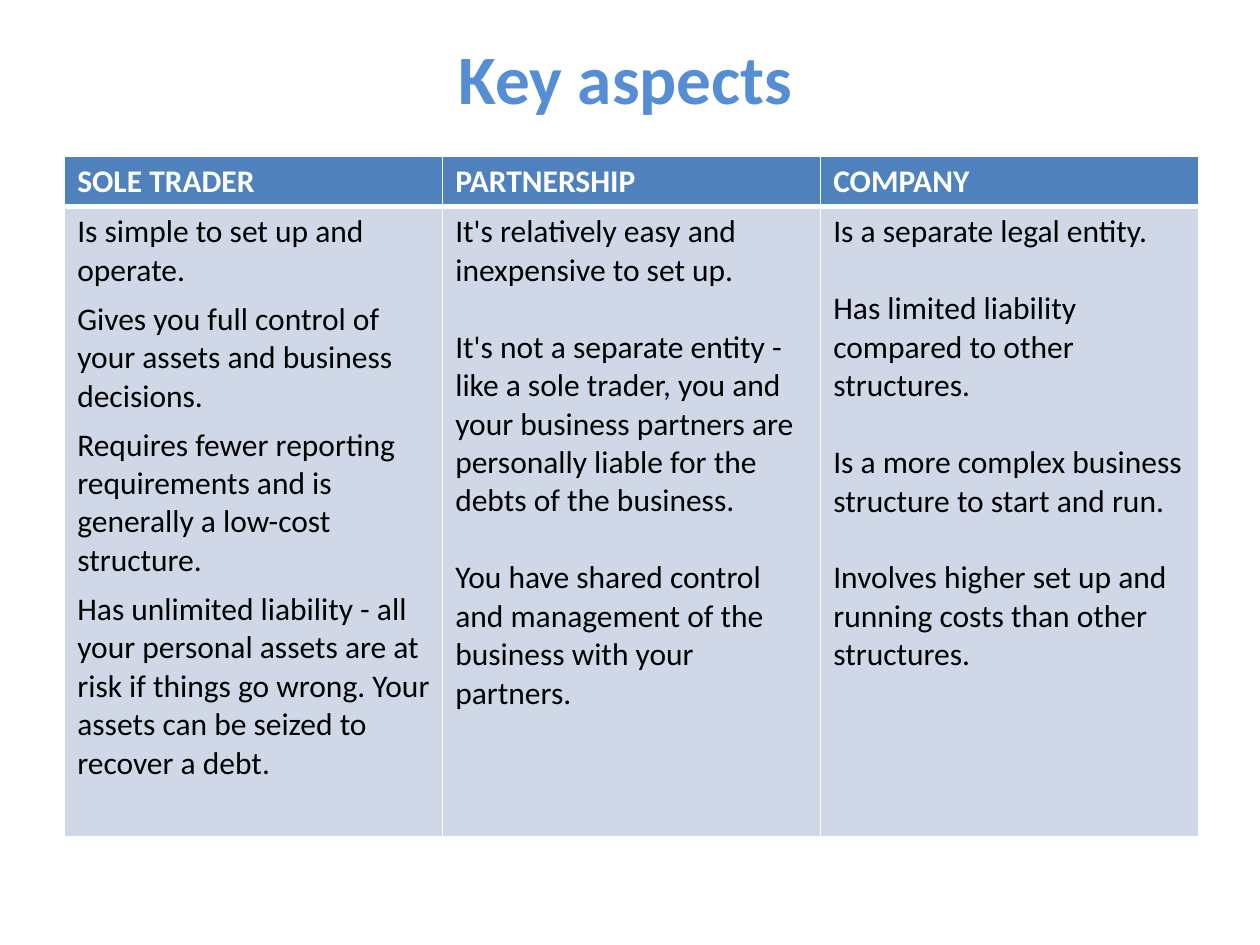
from dataclasses import dataclass

from lxml.etree import SubElement
from pptx import Presentation
from pptx.dml.color import RGBColor
from pptx.enum.text import MSO_ANCHOR, PP_ALIGN
from pptx.oxml.ns import qn
from pptx.slide import Slide
from pptx.table import _Cell
from pptx.util import Pt

FONT = "Calibri"
WHITE = "FFFFFF"
BLACK = "000000"
TITLE_BLUE = "558ED5"
HEADER_BLUE = "4F81BD"
BODY_BLUE = "D0D8E8"
TEXT_SIZE = 18
COLUMN_WIDTH = 216
HEADER_HEIGHT = 29
BODY_HEIGHT = 360


@dataclass
class Structure:
    name: str
    aspects: list[str]
    gap: float


@dataclass
class CellStyle:
    fill: str
    color: str
    bold: bool
    top_border: float
    bottom_border: float


HEADER_STYLE = CellStyle(HEADER_BLUE, WHITE, True, 1, 3)
BODY_STYLE = CellStyle(BODY_BLUE, BLACK, False, 3, 1)

STRUCTURES = [
    Structure("SOLE TRADER", [
        "Is simple to set up and operate.",
        "Gives you full control of your assets and business decisions.",
        "Requires fewer reporting requirements and is generally a low-cost structure.",
        "Has unlimited liability - all your personal assets are at risk if things go wrong. "
        "Your assets can be seized to recover a debt.",
    ], 6),
    Structure("PARTNERSHIP", [
        "It's relatively easy and inexpensive to set up.",
        "It's not a separate entity - like a sole trader, you and your business partners "
        "are personally liable for the debts of the business.",
        "You have shared control and management of the business with your partners.",
    ], 22),
    Structure("COMPANY", [
        "Is a separate legal entity.",
        "Has limited liability compared to other structures.",
        "Is a more complex business structure to start and run.",
        "Involves higher set up and running costs than other structures.",
    ], 22),
]


def rgb(value: str) -> RGBColor:
    return RGBColor.from_string(value)


def format_font(paragraph, size: float, color: str, bold: bool) -> None:
    for run in paragraph.runs:
        run.font.name = FONT
        run.font.size = Pt(size)
        run.font.bold = bold
        run.font.color.rgb = rgb(color)


def add_title(slide: Slide, text: str) -> None:
    shape = slide.shapes.add_textbox(Pt(31), Pt(16), Pt(653), Pt(56))
    text_frame = shape.text_frame
    text_frame.word_wrap = True
    text_frame.vertical_anchor = MSO_ANCHOR.MIDDLE
    text_frame.text = text
    paragraph = text_frame.paragraphs[0]
    paragraph.alignment = PP_ALIGN.CENTER
    format_font(paragraph, 39.6, TITLE_BLUE, True)


def add_borders(cell: _Cell, style: CellStyle) -> None:
    properties = cell._tc.get_or_add_tcPr()
    widths = {"L": 1, "R": 1, "T": style.top_border, "B": style.bottom_border}
    for side, width in widths.items():
        line = SubElement(properties, qn(f"a:ln{side}"), w=str(Pt(width)))
        fill = SubElement(line, qn("a:solidFill"))
        SubElement(fill, qn("a:srgbClr"), val=WHITE)


def fill_cell(cell: _Cell, texts: list[str], style: CellStyle, gap: float = 0) -> None:
    add_borders(cell, style)
    cell.fill.solid()
    cell.fill.fore_color.rgb = rgb(style.fill)
    cell.text_frame.text = "\n".join(texts)
    for paragraph in cell.text_frame.paragraphs:
        paragraph.space_after = Pt(gap)
        format_font(paragraph, TEXT_SIZE, style.color, style.bold)


def add_structure_table(slide: Slide, structures: list[Structure]) -> None:
    shape = slide.shapes.add_table(
        2, len(structures), Pt(37), Pt(89),
        Pt(COLUMN_WIDTH * len(structures)), Pt(HEADER_HEIGHT + BODY_HEIGHT),
    )
    table = shape.table
    table.rows[0].height = Pt(HEADER_HEIGHT)
    table.rows[1].height = Pt(BODY_HEIGHT)
    for index, structure in enumerate(structures):
        table.columns[index].width = Pt(COLUMN_WIDTH)
        fill_cell(table.cell(0, index), [structure.name], HEADER_STYLE)
        fill_cell(table.cell(1, index), structure.aspects, BODY_STYLE, structure.gap)


def main() -> None:
    presentation = Presentation()
    presentation.slide_width = Pt(720)
    presentation.slide_height = Pt(540)
    slide = presentation.slides.add_slide(presentation.slide_layouts[6])
    add_title(slide, "Key aspects")
    add_structure_table(slide, STRUCTURES)
    presentation.save("out.pptx")


if __name__ == "__main__":
    main()
